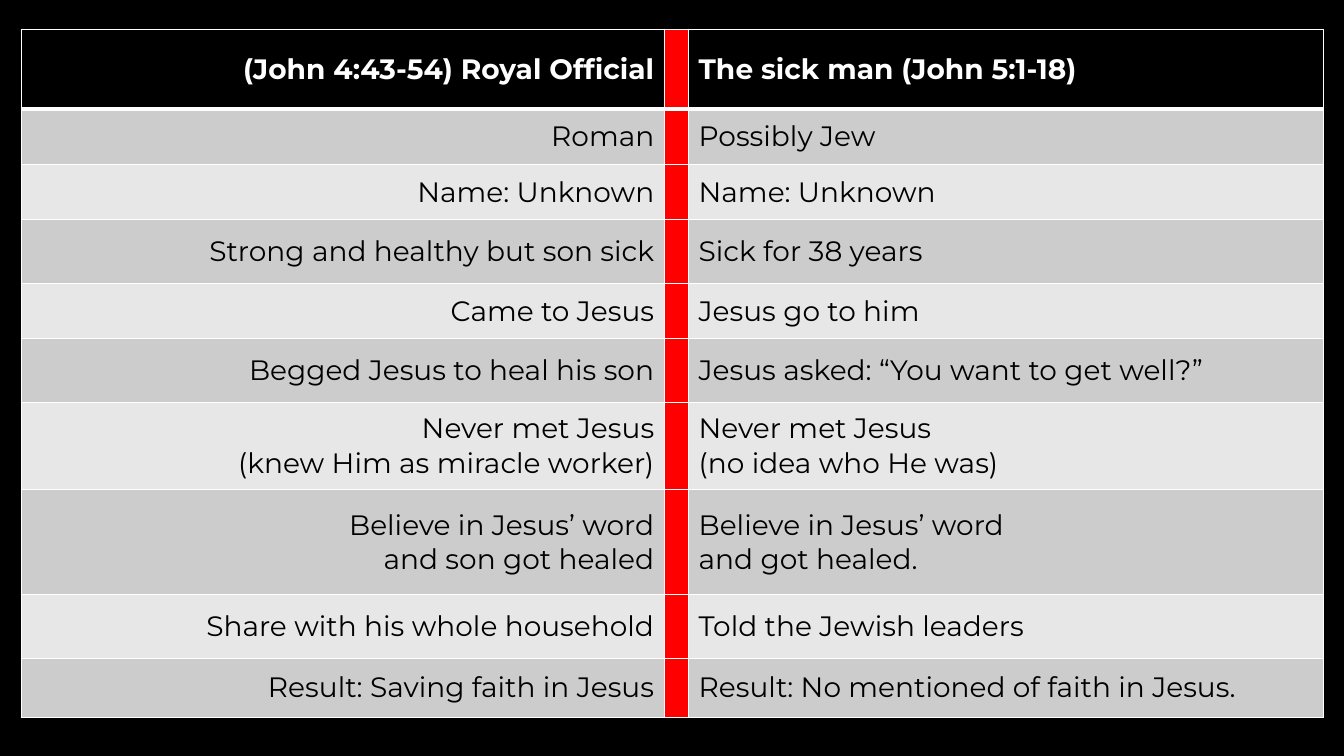
from dataclasses import dataclass

import pptx
import pptx.dml.color
import pptx.enum.text
import pptx.oxml
import pptx.oxml.ns
import pptx.util
from pptx.util import Inches

RIGHT = pptx.enum.text.PP_ALIGN.RIGHT
LEFT = pptx.enum.text.PP_ALIGN.LEFT


@dataclass(frozen=True)
class Theme:
    font: str = "Montserrat"
    size: int = 20
    black: str = "000000"
    white: str = "FFFFFF"
    divider: str = "FF0000"
    bands: tuple = ("CCCCCC", "E7E7E7")
    thin: int = 1
    thick: int = 3


THEME = Theme()

# Row height, royal official's side, sick man's side; one string per paragraph
COMPARISON = [
    (0.79, ["(John 4:43-54) Royal Official"], ["The sick man (John 5:1-18)"]),
    (0.55, ["Roman"], ["Possibly Jew"]),
    (0.55, ["Name: Unknown"], ["Name: Unknown"]),
    (0.63, ["Strong and healthy but son sick"], ["Sick for 38 years"]),
    (0.55, ["Came to Jesus"], ["Jesus go to him"]),
    (0.63, ["Begged Jesus to heal his son"],
     ["Jesus asked: “You want to get well?”"]),
    (0.87, ["Never met Jesus", "(knew Him as miracle worker)"],
     ["Never met Jesus", "(no idea who He was)"]),
    (1.04, ["Believe in Jesus’ word", "and son got healed"],
     ["Believe in Jesus’ word", "and got healed."]),
    (0.63, ["Share with his whole household"], ["Told the Jewish leaders"]),
    (0.59, ["Result: Saving faith in Jesus"],
     ["Result: No mentioned of faith in Jesus."]),
]
COLUMN_WIDTHS = (6.38, 0.24, 6.3)


def rgb(color):
    return pptx.dml.color.RGBColor.from_string(color)


def set_borders(cell, top, bottom):
    """Draw white cell edges; top and bottom are widths in points."""
    properties = cell._tc.get_or_add_tcPr()
    edges = {"L": THEME.thin, "R": THEME.thin, "T": top, "B": bottom}
    for side, width in edges.items():
        properties.append(pptx.oxml.parse_xml(
            f'<a:ln{side} {pptx.oxml.ns.nsdecls("a")} w="{pptx.util.Pt(width)}">'
            f'<a:solidFill><a:srgbClr val="{THEME.white}"/></a:solidFill>'
            f'</a:ln{side}>'))


def set_fill(cell, color):
    cell.fill.solid()
    cell.fill.fore_color.rgb = rgb(color)


def write_cell(cell, lines, align, color, bold):
    cell.vertical_anchor = pptx.enum.text.MSO_ANCHOR.MIDDLE
    frame = cell.text_frame
    for index, line in enumerate(lines):
        para = frame.add_paragraph() if index else frame.paragraphs[0]
        para.alignment = align
        span = para.add_run()
        span.text = line
        span.font.name = THEME.font
        span.font.size = pptx.util.Pt(THEME.size)
        span.font.bold = bold
        span.font.color.rgb = rgb(color)


def add_comparison_table(page, left, top, width, height):
    table = page.shapes.add_table(
        len(COMPARISON), len(COLUMN_WIDTHS),
        Inches(left), Inches(top), Inches(width), Inches(height)).table
    for column, column_width in zip(table.columns, COLUMN_WIDTHS):
        column.width = Inches(column_width)

    for index, (row_height, official, sick_man) in enumerate(COMPARISON):
        table.rows[index].height = Inches(row_height)
        header = index == 0
        fill = THEME.black if header else THEME.bands[(index - 1) % 2]
        color = THEME.white if header else THEME.black
        above = THEME.thick if index == 1 else THEME.thin
        below = THEME.thick if header else THEME.thin
        cells = list(table.rows[index].cells)
        for cell, cell_fill in zip(cells, (fill, THEME.divider, fill)):
            set_borders(cell, above, below)
            set_fill(cell, cell_fill)
        write_cell(cells[0], official, RIGHT, color, header)
        write_cell(cells[2], sick_man, LEFT, color, header)


def add_comparison_slide(deck):
    page = deck.slides.add_slide(deck.slide_layouts[6])
    page.background.fill.solid()
    page.background.fill.fore_color.rgb = rgb(THEME.black)
    row_total = sum(row[0] for row in COMPARISON)
    add_comparison_table(page, 0.21, 0.29, sum(COLUMN_WIDTHS), row_total)


def main():
    deck = pptx.Presentation()
    deck.slide_width = Inches(13.33)
    deck.slide_height = Inches(7.5)
    add_comparison_slide(deck)
    deck.save("out.pptx")


if __name__ == "__main__":
    main()
